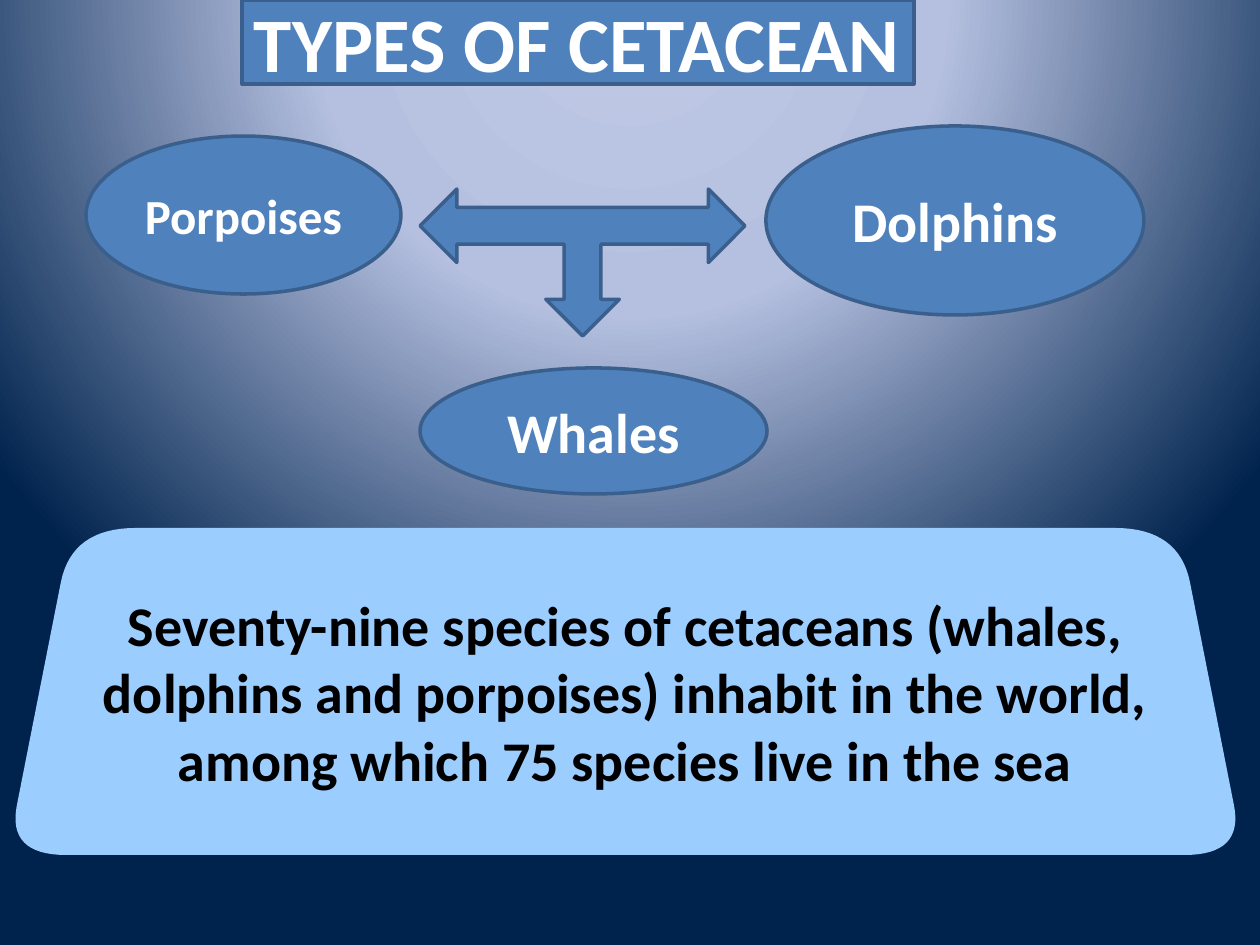
from pptx import Presentation, util as u
from pptx.dml.color import RGBColor
from pptx.enum import shapes, text
from pptx.oxml import parse_xml

PX = 7257  # EMU per px at 126 px to the inch
WIDTH, HEIGHT = 1260, 945
BLUE, EDGE, PALE, WHITE, BLACK = "4F81BD", "3A5F8C", "9CCDFF", "FFFFFF", "000000"
CENTER, LEFT = text.PP_ALIGN.CENTER, text.PP_ALIGN.LEFT

GLOW = [(0, "BFC9E5"), (40, "B5C0E0"), (100, "00234D")]
TITLE = ("TYPES OF CETACEAN", 44, (242, 0, 672, 84))
TYPES = [
    ("Whales", 32, (420, 368, 347, 126)),
    ("Dolphins", 32, (766, 126, 378, 189)),
    ("Porpoises", 28, (86, 136, 315, 158)),
]
ARROW = (420, 189, 325, 147)
FACT = ("Seventy-nine species of cetaceans (whales, dolphins and porpoises) "
        "inhabit in the world, among which 75 species live in the sea")
# Right-hand corners of the panel: start, control, end of each curve
PANEL_AXIS = 625.5
PANEL_CORNERS = [
    ((1115, 528), (1179, 528), (1190, 582)),
    ((1234, 805), (1244, 855), (1185, 855)),
]


def color(value):
    return RGBColor.from_string(value)


def paint(shape, fill, line=None):
    shape.shadow.inherit = False
    shape.fill.solid()
    shape.fill.fore_color.rgb = color(fill)
    if line:
        shape.line.color.rgb = color(line)
        shape.line.width = u.Pt(2)
    else:
        shape.line.fill.background()


def write(shape, words, size, ink=WHITE, align=CENTER, wrap=True, margin=12):
    frame = shape.text_frame
    layout = {"word_wrap": wrap, "vertical_anchor": text.MSO_ANCHOR.MIDDLE,
              "margin_left": margin * PX, "margin_right": margin * PX}
    for name, value in layout.items():
        setattr(frame, name, value)
    para = frame.paragraphs[0]
    para.alignment = align
    span = para.add_run()
    span.text = words
    for name, value in {"name": "Calibri", "size": u.Pt(size), "bold": True}.items():
        setattr(span.font, name, value)
    span.font.color.rgb = color(ink)


def add_box(page, kind, place):
    box = page.shapes.add_shape(kind, *(n * PX for n in place))
    paint(box, BLUE, EDGE)
    return box


def curve(start, control, end, steps=16):
    for i in range(steps + 1):
        t = i / steps
        yield tuple((1 - t) ** 2 * a + 2 * t * (1 - t) * b + t * t * c
                    for a, b, c in zip(start, control, end))


def add_panel(page):
    right = [point for corner in PANEL_CORNERS for point in curve(*corner)]
    left = [(2 * PANEL_AXIS - x, y) for x, y in reversed(right)]
    outline = [(round(x * PX), round(y * PX)) for x, y in right + left]
    builder = page.shapes.build_freeform(*outline[0])
    builder.add_line_segments(outline[1:], close=True)
    panel = builder.convert_to_shape()
    paint(panel, PALE)
    return panel


def set_glow(page):
    stops = "".join(f'<a:gs pos="{pos * 1000}"><a:srgbClr val="{value}"/></a:gs>'
                    for pos, value in GLOW)
    page.background.fill.solid()
    solid = page.element.cSld.bg.bgPr[0]
    solid.getparent().replace(solid, parse_xml(
        '<a:gradFill xmlns:a="http://schemas.openxmlformats.org/drawingml/2006/main" '
        f'rotWithShape="1"><a:gsLst>{stops}</a:gsLst><a:path path="circle">'
        '<a:fillToRect l="50000" t="-80000" r="50000" b="180000"/></a:path></a:gradFill>'))


def main():
    deck = Presentation()
    deck.slide_width, deck.slide_height = WIDTH * PX, HEIGHT * PX
    page = deck.slides.add_slide(deck.slide_layouts[6])
    set_glow(page)

    # Animal types
    for name, size, place in TYPES:
        write(add_box(page, shapes.MSO_SHAPE.OVAL, place), name, size)

    # Title
    words, size, place = TITLE
    banner = add_box(page, shapes.MSO_SHAPE.RECTANGLE, place)
    write(banner, words, size, align=LEFT, wrap=False)

    # Fact panel
    write(add_panel(page), FACT, 32, ink=BLACK, margin=70)

    # Three-way arrow pointing down
    arrow = add_box(page, shapes.MSO_SHAPE.LEFT_RIGHT_UP_ARROW, ARROW)
    arrow.rotation = 180

    deck.save("out.pptx")


if __name__ == "__main__":
    main()
